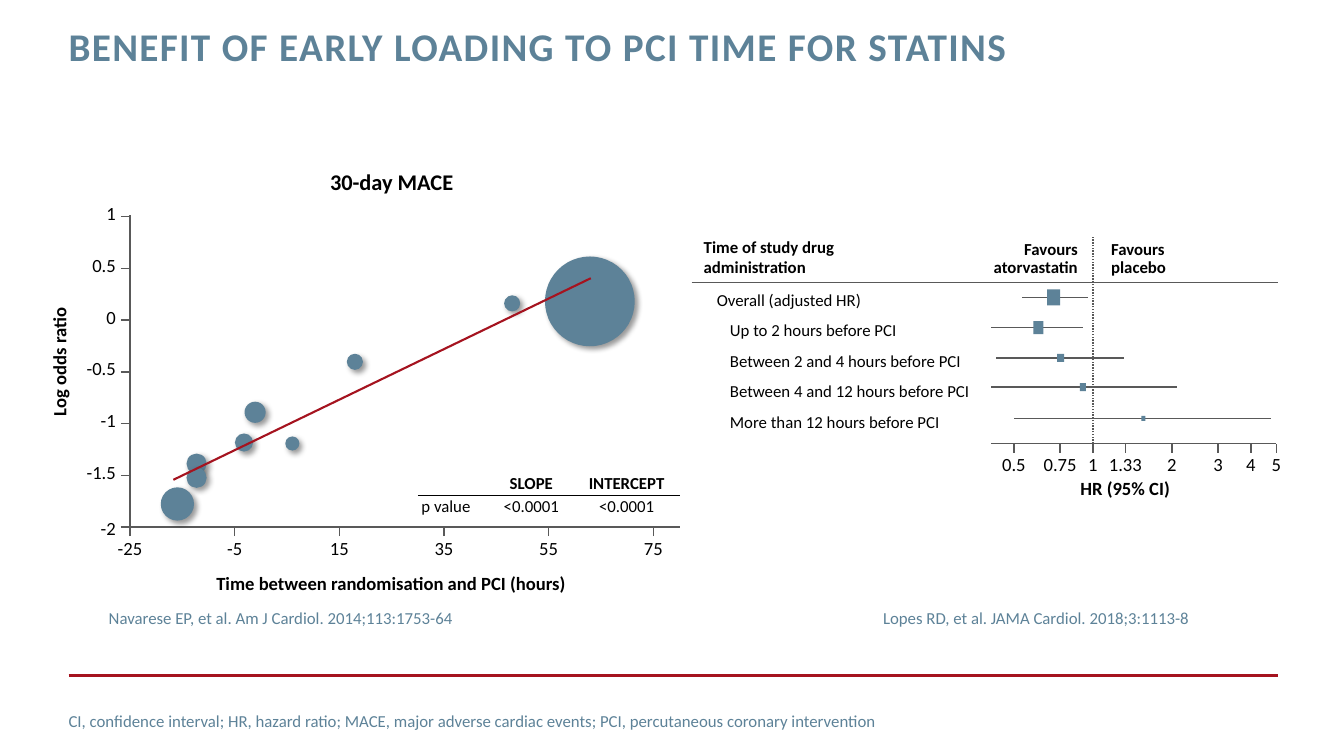
"""Build the slide on early statin loading before PCI."""
import copy
import math
from dataclasses import dataclass

from lxml import etree
from pptx import Presentation
from pptx import util as u
from pptx.dml.color import RGBColor
from pptx.enum import dml, shapes, text
from pptx.oxml.ns import qn

BLUE, RED, GREY, BLACK, WHITE = "5D8298", "A5131F", "595959", "000000", "FFFFFF"
LEFT, CENTRE, RIGHT = text.PP_ALIGN.LEFT, text.PP_ALIGN.CENTER, text.PP_ALIGN.RIGHT
AXIS_X, AXIS_Y, TICK = 1.29, 5.23, 0.09
HR_AXIS_Y, HR_ONE = 4.4, 10.84
LABEL_SIZE, LABEL_HEIGHT = 13.3, 0.2


@dataclass
class Label:
    wording: str
    left: float
    top: float
    width: float
    height: float = LABEL_HEIGHT
    size: float = LABEL_SIZE
    align: text.PP_ALIGN = CENTRE
    bold: bool = True
    rotation: int = 0


@dataclass
class Trial:
    x: float
    y: float
    diameter: float


@dataclass
class Estimate:
    low: float
    high: float
    x: float
    y: float
    width: float
    height: float


TRIALS = [
    Trial(3.52, 3.59, 0.16), Trial(5.08, 3.01, 0.16), Trial(2.42, 4.39, 0.18),
    Trial(2.9, 4.4, 0.14), Trial(2.53, 4.09, 0.21), Trial(5.85, 2.99, 0.89),
    Trial(1.95, 4.6, 0.2), Trial(1.95, 4.74, 0.2), Trial(1.76, 5.0, 0.33),
]
ESTIMATES = [
    Estimate(10.14, 10.79, 10.45, 2.95, 0.13, 0.16),
    Estimate(9.83, 10.74, 10.3, 3.25, 0.1, 0.13),
    Estimate(9.88, 11.15, 10.52, 3.55, 0.07, 0.08),
    Estimate(9.83, 11.67, 10.74, 3.84, 0.06, 0.08),
    Estimate(10.06, 12.61, 11.34, 4.15, 0.04, 0.05),
]
LABELS = [
    Label("30-day MACE", 3.17, 1.7, 1.43, 0.24, 16),
    Label("Log odds ratio", -0.05, 3.49, 1.3, rotation=270),
    Label("Time between randomisation and PCI (hours)", 1.87, 5.7, 4.02),
    Label("HR (95% CI)", 10.63, 4.76, 1.06),
    Label("Favours\vatorvastatin", 9.74, 2.39, 0.95, 0.36, 12, RIGHT),
    Label("Favours\vplacebo", 11.02, 2.39, 0.65, 0.36, 12, LEFT),
]
TIMINGS = [
    "Time of study drug\vadministration", "Overall (adjusted HR)", "Up to 2 hours before PCI",
    "Between 2 and 4 hours before PCI", "Between 4 and 12 hours before PCI",
    "More than 12 hours before PCI",
]
P_VALUES = [["", "SLOPE", "INTERCEPT"], ["p value", "<0.0001", "<0.0001"]]


def colour(value: str) -> RGBColor:
    return RGBColor.from_string(value)


def format_runs(paragraph, size: float, tint: str = BLACK, bold: bool = False) -> None:
    for run in paragraph.runs:
        run.font.name, run.font.size, run.font.bold = "Calibri", u.Pt(size), bold
        run.font.color.rgb = colour(tint)
    for line_break in paragraph._p.findall(qn("a:br")):
        line_break.insert(0, copy.deepcopy(paragraph.runs[0]._r.rPr))


def clear_margins(frame) -> None:
    frame.margin_left = frame.margin_top = frame.margin_right = frame.margin_bottom = 0


def place(item, left: float, top: float, width: float, height: float) -> None:
    item.left, item.top = u.Inches(left), u.Inches(top)
    item.width, item.height = u.Inches(width), u.Inches(height)


def add_box(slide, left: float, top: float, width: float, height: float):
    box = slide.shapes.add_textbox(*map(u.Inches, (left, top, width, height)))
    box.text_frame.word_wrap = False
    box.text_frame.auto_size = text.MSO_AUTO_SIZE.SHAPE_TO_FIT_TEXT
    return box


def draw_label(slide, label: Label) -> None:
    box = add_box(slide, label.left, label.top, label.width, label.height)
    box.rotation = label.rotation
    clear_margins(box.text_frame)
    paragraph = box.text_frame.paragraphs[0]
    paragraph.text = label.wording
    paragraph.alignment, paragraph.line_spacing = label.align, 0.9
    format_runs(paragraph, label.size, bold=label.bold)


def draw_line(slide, x1: float, y1: float, x2: float, y2: float,
              tint: str = GREY, weight: float = 1):
    line = slide.shapes.add_connector(shapes.MSO_CONNECTOR.STRAIGHT,
                                      *map(u.Inches, (x1, y1, x2, y2)))
    line.line.color.rgb, line.line.width = colour(tint), u.Pt(weight)
    etree.SubElement(line._element.spPr, qn("a:effectLst"))
    return line


def draw_marker(slide, preset, x: float, y: float, width: float, height: float):
    marker = slide.shapes.add_shape(
        preset, *map(u.Inches, (x - width / 2, y - height / 2, width, height)))
    marker.shadow.inherit = False
    marker.fill.solid()
    marker.fill.fore_color.rgb = colour(BLUE)
    marker.line.fill.background()
    return marker


def draw_trial(slide, trial: Trial) -> None:
    bubble = draw_marker(slide, shapes.MSO_SHAPE.OVAL, trial.x, trial.y,
                         trial.diameter, trial.diameter)
    effects = bubble._element.spPr.find(qn("a:effectLst"))
    shadow = etree.SubElement(effects, qn("a:outerShdw"), blurRad=str(u.Pt(4)),
                              dist=str(u.Pt(3)), dir="2700000", algn="tl", rotWithShape="0")
    tint = etree.SubElement(shadow, qn("a:srgbClr"), val=BLACK)
    etree.SubElement(tint, qn("a:alpha"), val="40000")


def draw_estimate(slide, estimate: Estimate) -> None:
    draw_line(slide, estimate.low, estimate.y, estimate.high, estimate.y)
    draw_marker(slide, shapes.MSO_SHAPE.RECTANGLE, estimate.x, estimate.y,
                estimate.width, estimate.height)


def draw_bottom_tick(slide, wording: str, x: float, axis_y: float) -> None:
    draw_line(slide, x, axis_y + TICK, x, axis_y)
    draw_label(slide, Label(wording, x - 0.2, axis_y + 0.12, 0.4, bold=False))


def draw_bubble_plot(slide) -> None:
    draw_line(slide, AXIS_X - TICK, AXIS_Y, 6.74, AXIS_Y)
    draw_line(slide, AXIS_X, AXIS_Y, AXIS_X, 2.13)
    for step, odds in enumerate(["-2", "-1.5", "-1", "-0.5", "0", "0.5", "1"]):
        y = AXIS_Y - step * 3.08 / 6
        draw_line(slide, AXIS_X - TICK, y, AXIS_X, y)
        rise = 0.12 if step else 0.08
        draw_label(slide, Label(odds, 0.75, y - rise, 0.4, align=RIGHT, bold=False))
    for step, hours in enumerate(range(-25, 76, 20)):
        draw_bottom_tick(slide, str(hours), AXIS_X + step * 5.19 / 5, AXIS_Y)
    for trial in TRIALS:
        draw_trial(slide, trial)
    draw_line(slide, 1.72, 4.76, 5.86, 2.76, RED, 1.5)


def draw_cell(cell, wording: str, row: int, column: int) -> None:
    cell.margin_left = cell.margin_right = u.Inches(0.03)
    cell.margin_top = cell.margin_bottom = u.Inches(0.01)
    paragraph = cell.text_frame.paragraphs[0]
    paragraph.text = wording
    paragraph.alignment = CENTRE if column else LEFT
    format_runs(paragraph, 12, bold=row == 0)
    if not wording:
        etree.SubElement(paragraph._p, qn("a:endParaRPr"), sz="1200")
    for side in "LRTB":
        ruled = side == ("T" if row else "B")
        border = etree.SubElement(cell._tc.get_or_add_tcPr(), qn(f"a:ln{side}"),
                                  w=str(u.Pt(0.75 if ruled else 1)))
        fill = etree.SubElement(border, qn("a:solidFill"))
        etree.SubElement(fill, qn("a:srgbClr"), val=BLACK if ruled else WHITE)
    cell.fill.background()


def draw_p_values(slide) -> None:
    table = slide.shapes.add_table(2, 3, *map(u.Inches, (4.15, 4.69, 2.59, 0.46))).table
    table.first_row = table.horz_banding = False
    for column, width in zip(table.columns, (0.7, 0.84, 1.05)):
        column.width = u.Inches(width)
    for row, wordings in enumerate(P_VALUES):
        for column, wording in enumerate(wordings):
            draw_cell(table.cell(row, column), wording, row, column)


def draw_timings(slide) -> None:
    frame = add_box(slide, 6.98, 2.35, 2.93, 1.94).text_frame
    clear_margins(frame)
    for row, wording in enumerate(TIMINGS):
        paragraph = frame.add_paragraph() if row else frame.paragraphs[0]
        paragraph.text = wording
        paragraph.space_after = u.Pt(2.7 if row else 4)
        if row:
            paragraph.line_spacing = 1.33
            paragraph._p.get_or_add_pPr().set("marL", str(u.Inches(0.13 * min(row, 2))))
        format_runs(paragraph, 12, bold=row == 0)


def draw_forest_plot(slide) -> None:
    draw_line(slide, 9.83, HR_AXIS_Y, 12.66, HR_AXIS_Y)
    for ratio in ("0.5", "0.75", "1", "1.33", "2", "3", "4", "5"):
        draw_bottom_tick(slide, ratio, HR_ONE + 1.13 * math.log(float(ratio)), HR_AXIS_Y)
    no_effect = draw_line(slide, HR_ONE, HR_AXIS_Y, HR_ONE, 2.35)
    no_effect.line.dash_style = dml.MSO_LINE.ROUND_DOT
    draw_timings(slide)
    for estimate in ESTIMATES:
        draw_estimate(slide, estimate)
    draw_line(slide, 6.86, 2.8, 12.68, 2.8)


def fill_placeholder(holder, wording: str, size: float, bold: bool, anchor):
    frame = holder.text_frame
    frame.text = wording
    frame.word_wrap, frame.auto_size = True, text.MSO_AUTO_SIZE.NONE
    frame.vertical_anchor = anchor
    clear_margins(frame)
    paragraph = frame.paragraphs[0]
    paragraph.alignment, paragraph.space_before = LEFT, u.Pt(0)
    format_runs(paragraph, size, BLUE, bold)
    return paragraph


def draw_frame(slide) -> None:
    draw_line(slide, 0.68, 6.7, 12.68, 6.7, RED, 2)
    title, abbreviations = slide.shapes.title, slide.placeholders[1]
    place(title, 0.68, 0.27, 9.56, 0.88)
    heading = fill_placeholder(title, "BENEFIT OF EARLY LOADING TO PCI TIME FOR STATINS",
                               28, True, text.MSO_ANCHOR.TOP)
    heading.line_spacing = u.Pt(30)
    heading.runs[0]._r.rPr.set("spc", "100")
    place(abbreviations, 0.68, 6.95, 8.88, 0.4)
    note = fill_placeholder(
        abbreviations, "CI, confidence interval; HR, hazard ratio; MACE, major adverse cardiac "
        "events; PCI, percutaneous coronary intervention", 12, False, text.MSO_ANCHOR.MIDDLE)
    properties = note._p.get_or_add_pPr()
    properties.set("marL", "0")
    properties.set("indent", "0")
    etree.SubElement(properties, qn("a:buNone"))
    for citation, left, width in (
            ("Navarese EP, et al. Am J Cardiol. 2014;113:1753-64", 0.98, 3.66),
            ("Lopes RD, et al. JAMA Cardiol. 2018;3:1113-8", 8.66, 3.28)):
        frame = add_box(slide, left, 5.98, width, 0.3).text_frame
        frame.text = citation
        format_runs(frame.paragraphs[0], 12, BLUE)


def main() -> None:
    deck = Presentation()
    deck.slide_width, deck.slide_height = u.Inches(13.33), u.Inches(7.5)
    slide = deck.slides.add_slide(deck.slide_layouts[1])
    draw_frame(slide)
    draw_bubble_plot(slide)
    draw_p_values(slide)
    draw_forest_plot(slide)
    for label in LABELS:
        draw_label(slide, label)
    deck.save("out.pptx")


if __name__ == "__main__":
    main()
